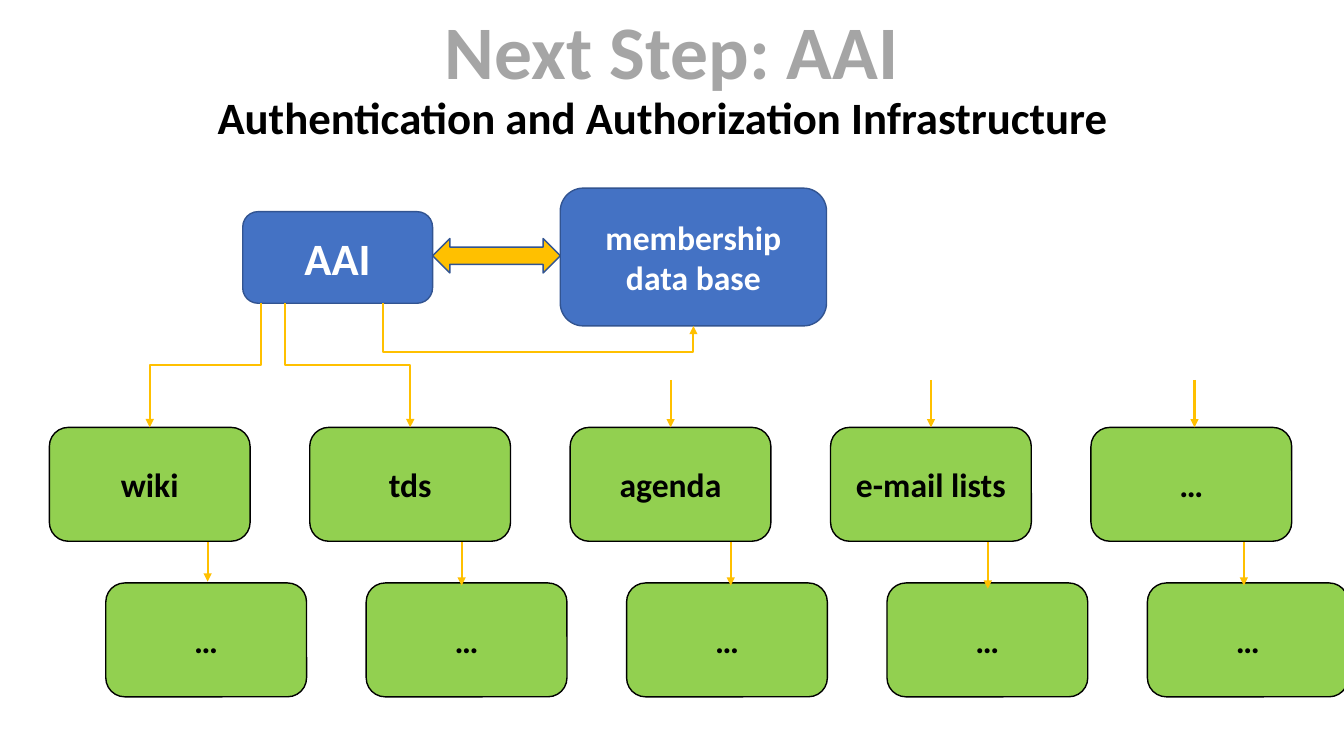
"""Build the AAI slide on a grid of 160 columns by 90 rows."""
from dataclasses import dataclass
from typing import Optional

from lxml.etree import SubElement as Sub
from pptx import Presentation
from pptx.dml.color import RGBColor as Rgb
from pptx.enum.shapes import MSO_CONNECTOR as Link, MSO_SHAPE as Kind
from pptx.enum.text import MSO_ANCHOR as Anchor, PP_ALIGN as Align
from pptx.oxml.ns import qn
from pptx.util import Emu, Inches, Pt

HUES = {"blue": "4472C4", "edge": "325491", "green": "92D050", "gold": "FFC000",
        "black": "000000", "white": "FFFFFF", "gray": "A5A5A5"}
COLS, ROWS = 160, 90
WIDE, HIGH = Inches(13.33), Inches(7.5)
BOX_W, BOX_H, PITCH = 23.9, 13.56, 31
TOP_X, TOP_Y = 5.88, 50.88
LOW_X, LOW_Y = 12.6, 69.4
BASE = 36.1


@dataclass
class Box:
    """A filled shape, placed in columns and rows."""
    x: float
    y: float
    w: float
    h: float
    text: str = ""
    fill: str = "green"
    edge: str = "black"
    ink: str = "black"
    size: int = 24
    kind: Kind = Kind.ROUNDED_RECTANGLE


@dataclass
class Label:
    """A line of text without a frame."""
    x: float
    y: float
    w: float
    h: float
    text: str
    size: int
    ink: str
    align: Align
    wrap: bool


@dataclass
class Arrow:
    """A gold arrow from one grid point to another."""
    x: float
    y: float
    to_x: float
    to_y: float


def col(n: float) -> Emu:
    """Turn columns into a length."""
    return Emu(round(n * WIDE / COLS))


def row(n: float) -> Emu:
    """Turn rows into a length."""
    return Emu(round(n * HIGH / ROWS))


def paint(hue: str) -> Rgb:
    """Look up a colour."""
    return Rgb.from_string(HUES[hue])


def write(frame, text: str, size: int, ink: str, align: Align) -> None:
    """Set one bold paragraph."""
    line = frame.paragraphs[0]
    line.text, line.alignment = text, align
    font = line.font
    font.name, font.size, font.bold = "Calibri", Pt(size), True
    font.color.rgb = paint(ink)


def draw_box(slide, box: Box):
    """Draw a box and its text."""
    shape = slide.shapes.add_shape(box.kind, col(box.x), row(box.y), col(box.w), row(box.h))
    shape.shadow.inherit = False
    shape.fill.solid()
    shape.fill.fore_color.rgb = paint(box.fill)
    shape.line.color.rgb = paint(box.edge)
    shape.line.width = Pt(1)
    if box.text:
        shape.text_frame.word_wrap = True
        shape.text_frame.vertical_anchor = Anchor.MIDDLE
        write(shape.text_frame, box.text, box.size, box.ink, Align.CENTER)
    return shape


def draw_label(slide, label: Label) -> None:
    """Draw a label."""
    shape = slide.shapes.add_textbox(col(label.x), row(label.y), col(label.w), row(label.h))
    shape.text_frame.word_wrap = label.wrap
    write(shape.text_frame, label.text, label.size, label.ink, label.align)


def draw_arrow(slide, arrow: Arrow, kind: Link = Link.STRAIGHT, goal: Optional[object] = None):
    """Draw an arrow, joined to the top of its goal if there is one."""
    line = slide.shapes.add_connector(kind, col(arrow.x), row(arrow.y),
                                      col(arrow.to_x), row(arrow.to_y))
    line.line.color.rgb = paint("gold")
    line.line.width = Pt(1.5)
    Sub(line.line._get_or_add_ln(), qn("a:tailEnd"), type="triangle")
    Sub(line._element.spPr, qn("a:effectLst"))
    if goal is not None:
        line.end_connect(goal, 0)
    return line


def draw_step(slide, arrow: Arrow) -> None:
    """Draw an elbow that leaves and arrives upright."""
    line = draw_arrow(slide, arrow, Link.ELBOW)
    mid_x, mid_y = line.left + line.width // 2, line.top + line.height // 2
    line.width, line.height = line.height, line.width
    line.left, line.top = mid_x - line.width // 2, mid_y - line.height // 2
    frame = line._element.spPr.find(qn("a:xfrm"))
    right = arrow.to_x > arrow.x
    frame.set("rot", str((270 if right else 90) * 60000))
    frame.set("flipH", "1" if right else "0")


def draw_loop(slide, arrow: Arrow, dip: float) -> None:
    """Draw an elbow that dips to a row and comes back up."""
    line = draw_arrow(slide, arrow, Link.ELBOW)
    shape = line._element.spPr.find(qn("a:prstGeom"))
    shape.set("prst", "bentConnector4")
    guides = shape.find(qn("a:avLst"))
    if guides is None:
        guides = Sub(shape, qn("a:avLst"))
    depth = (dip - arrow.y) / (arrow.to_y - arrow.y)
    for name, share in (("adj1", 0), ("adj2", depth)):
        Sub(guides, qn("a:gd"), name=name, fmla=f"val {round(share * 100000)}")


def main() -> None:
    """Build and save the slide."""
    deck = Presentation()
    deck.slide_width, deck.slide_height = WIDE, HIGH
    slide = deck.slides.add_slide(deck.slide_layouts[6])

    for label in (
        Label(24.72, 10.08, 110.5, 7.68, "Authentication and Authorization Infrastructure",
              32, "black", Align.LEFT, True),
        Label(51.5, -0.1, 57, 12.1, "Next Step: AAI", 54, "gray", Align.CENTER, False),
    ):
        draw_label(slide, label)

    for box in (
        Box(28.9, 25.2, 22.6, 10.9, "AAI", "blue", "edge", "white", 32),
        Box(66.7, 22.4, 31.7, 16.4, "membership data base", "blue", "edge", "white"),
        Box(51.5, 28.4, 15.2, 4.1, fill="gold", edge="edge", kind=Kind.LEFT_RIGHT_ARROW),
    ):
        draw_box(slide, box)
    draw_loop(slide, Arrow(45.6, BASE, 82.55, 38.8), 41.9)

    for i in range(5):
        draw_box(slide, Box(LOW_X + i * PITCH, LOW_Y, BOX_W, BOX_H, "…"))
    for x, y in ((24.72, 63.6), (54.96, 64.08), (87, 64.08), (117.6, 64.44), (148.08, 64.08)):
        draw_arrow(slide, Arrow(x, y, x, y + 5.64))

    tools = [draw_box(slide, Box(TOP_X + i * PITCH, TOP_Y, BOX_W, BOX_H, name))
             for i, name in enumerate(("wiki", "tds", "agenda", "e-mail lists", "…"))]
    mids = [TOP_X + i * PITCH + BOX_W / 2 for i in range(5)]
    for x, mid in zip((31.1, 33.96), mids):
        draw_step(slide, Arrow(x, BASE, mid, TOP_Y))
    for x, goal in ((mids[2], tools[2]), (mids[3], tools[3]), (142.2, None)):
        draw_arrow(slide, Arrow(x, 45.24, x, TOP_Y), goal=goal)

    deck.save("out.pptx")


if __name__ == "__main__":
    main()
